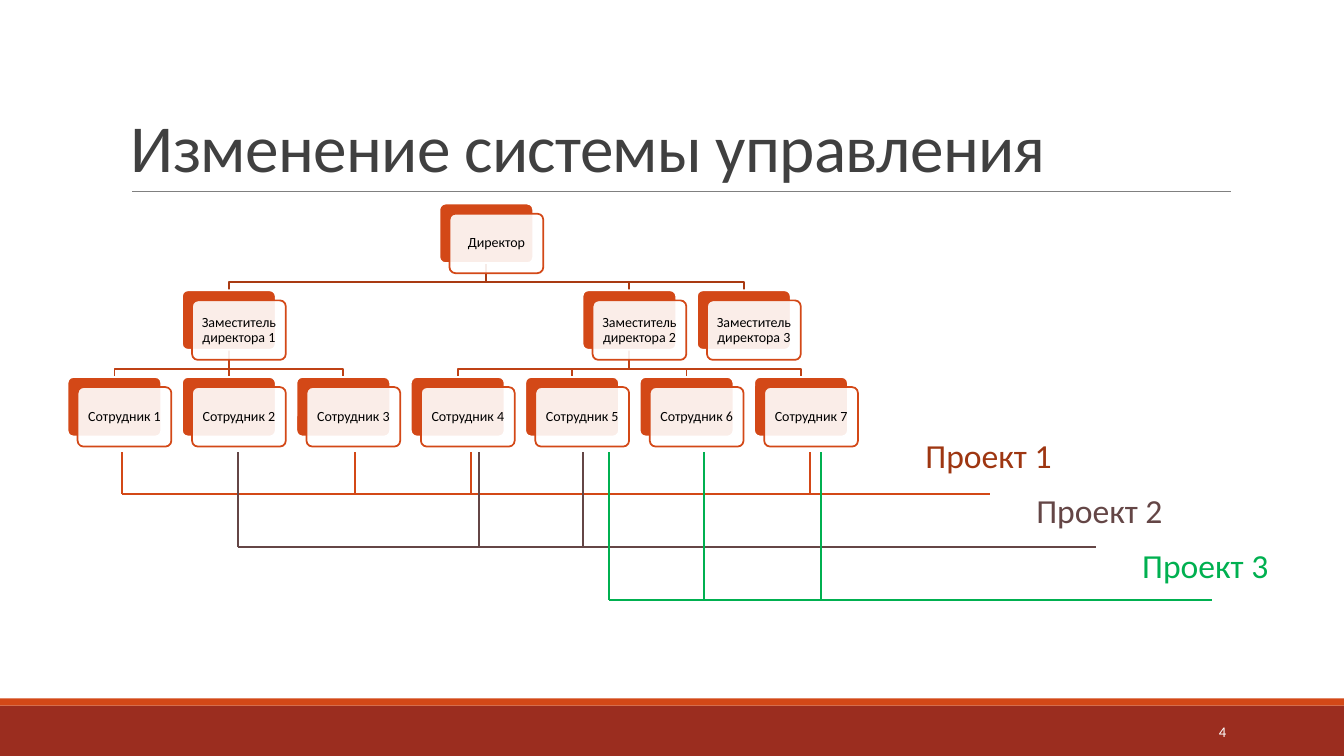
from dataclasses import dataclass

from lxml import etree
from pptx import Presentation
from pptx.dml.color import RGBColor
from pptx.enum import shapes, text
from pptx.oxml.ns import qn
from pptx.util import Inches, Pt


@dataclass(frozen=True)
class Theme:
    font: str = "Calibri"
    white: str = "FFFFFF"
    black: str = "000000"
    accent: str = "D34817"
    footer: str = "9B2D1F"
    rule: str = "808080"
    heading: str = "404040"
    upper_branch: str = "A93A12"
    lower_branch: str = "BF4115"
    project_label: str = "9E3611"
    brown: str = "644646"
    green: str = "00B050"
    heading_size: float = 48
    label_size: float = 24
    number_size: float = 10.5
    card_size: float = 10
    rule_width: float = 0.5
    card_line: float = 1.25
    project_line: float = 1.5


@dataclass(frozen=True)
class Person:
    role: str
    column: float
    level: int
    reports: tuple["Person", ...] = ()

    @property
    def left(self) -> float:
        return 0.67 + 1.135 * self.column

    @property
    def top(self) -> float:
        return 2.02 + 0.86 * self.level

    @property
    def center(self) -> float:
        return self.left + CARD_WIDTH / 2

    @property
    def bottom(self) -> float:
        return self.top + CARD_HEIGHT


@dataclass(frozen=True)
class Project:
    title: str
    color: str
    title_color: str
    title_left: float
    title_top: float
    base: float
    end: float
    members: tuple[float, ...]


THEME = Theme()
CARD_WIDTH, CARD_HEIGHT, CARD_OFFSET = 0.93, 0.59, 0.1
MEMBERS_TOP = 4.48


def employees(first: int, last: int) -> tuple[Person, ...]:
    return tuple(Person(f"Сотрудник {n}", n - 1, 2) for n in range(first, last + 1))


DIRECTOR = Person("Директор", 3.25, 0, (
    Person("Заместитель директора 1", 1, 1, employees(1, 3)),
    Person("Заместитель директора 2", 4.5, 1, employees(4, 7)),
    Person("Заместитель директора 3", 5.5, 1),
))
PROJECTS = (
    Project("Проект 1", THEME.accent, THEME.project_label, 9.08, 4.27, 4.9, 9.82,
            (1.21, 3.52, 4.67, 8.03)),
    Project("Проект 2", THEME.brown, THEME.brown, 10.18, 4.81, 5.43, 10.87,
            (2.36, 4.75, 5.78)),
    Project("Проект 3", THEME.green, THEME.green, 11.23, 5.36, 5.95, 12.02,
            (6.04, 6.98, 8.14)),
)


def rgb(color: str) -> RGBColor:
    return RGBColor.from_string(color)


def write(frame, content: str, size: float, color: str, align=text.PP_ALIGN.LEFT,
          anchor=text.MSO_ANCHOR.TOP, spacing: float = 1.0):
    frame.word_wrap = True
    frame.vertical_anchor = anchor
    frame.text = content
    paragraph = frame.paragraphs[0]
    paragraph.alignment = align
    paragraph.line_spacing = spacing
    font = paragraph.runs[0].font
    font.name, font.size, font.color.rgb = THEME.font, Pt(size), rgb(color)
    return font


def add_label(canvas, left: float, top: float, width: float, height: float,
              content: str, size: float, color: str, **layout):
    label = canvas.add_textbox(Inches(left), Inches(top), Inches(width), Inches(height))
    return write(label.text_frame, content, size, color, **layout)


def add_line(canvas, x1: float, y1: float, x2: float, y2: float,
             color: str, width: float) -> None:
    line = canvas.add_connector(shapes.MSO_CONNECTOR.STRAIGHT,
                                Inches(x1), Inches(y1), Inches(x2), Inches(y2))
    line.line.color.rgb = rgb(color)
    line.line.width = Pt(width)
    etree.SubElement(line._element.spPr, qn("a:effectLst"))


def add_block(canvas, kind, left: float, top: float, width: float, height: float, fill: str):
    block = canvas.add_shape(kind, Inches(left), Inches(top), Inches(width), Inches(height))
    block.shadow.inherit = False
    block.fill.solid()
    block.fill.fore_color.rgb = rgb(fill)
    block.line.fill.background()
    return block


def add_branch(canvas, boss: Person, report: Person) -> None:
    color = THEME.lower_branch if boss.level else THEME.upper_branch
    if boss.center == report.center:
        add_line(canvas, boss.center, boss.bottom, report.center, report.top,
                 color, THEME.card_line)
        return
    bend = boss.bottom + 0.19
    outline = canvas.build_freeform(Inches(boss.center), Inches(boss.bottom))
    outline.add_line_segments([
        (Inches(boss.center), Inches(bend)),
        (Inches(report.center), Inches(bend)),
        (Inches(report.center), Inches(report.top)),
    ], close=False)
    branch = outline.convert_to_shape()
    branch.shadow.inherit = False
    branch.fill.background()
    branch.line.color.rgb = rgb(color)
    branch.line.width = Pt(THEME.card_line)


def add_branches(canvas, boss: Person) -> None:
    for report in boss.reports:
        add_branch(canvas, boss, report)
        add_branches(canvas, report)


def add_cards(canvas, person: Person) -> None:
    for shift, fill, border in ((0, THEME.accent, THEME.white),
                                (CARD_OFFSET, THEME.white, THEME.accent)):
        card = add_block(canvas, shapes.MSO_SHAPE.ROUNDED_RECTANGLE, person.left + shift,
                         person.top + shift, CARD_WIDTH, CARD_HEIGHT, fill)
        card.adjustments[0] = 0.1
        card.line.color.rgb = rgb(border)
        card.line.width = Pt(THEME.card_line)
    tint = card._element.spPr.find(qn("a:solidFill"))[0]
    etree.SubElement(tint, qn("a:alpha"), val="90000")
    frame = card.text_frame
    frame.margin_left = frame.margin_right = Inches(0.02)
    frame.margin_top = frame.margin_bottom = Inches(0.02)
    write(frame, person.role, THEME.card_size, THEME.black, align=text.PP_ALIGN.CENTER,
          anchor=text.MSO_ANCHOR.MIDDLE, spacing=0.9)
    for report in person.reports:
        add_cards(canvas, report)


def add_project(canvas, project: Project) -> None:
    lines = canvas.add_group_shape().shapes
    add_line(lines, project.members[0], project.base, project.end, project.base,
             project.color, THEME.project_line)
    for member in project.members:
        add_line(lines, member, project.base, member, MEMBERS_TOP,
                 project.color, THEME.project_line)
    add_label(canvas, project.title_left, project.title_top, 1.89, 0.5, project.title,
              THEME.label_size, project.title_color)


def main() -> None:
    deck = Presentation()
    deck.slide_width, deck.slide_height = Inches(13.33), Inches(7.5)
    canvas = deck.slides.add_slide(deck.slide_layouts[6]).shapes

    add_block(canvas, shapes.MSO_SHAPE.RECTANGLE, 0, 7, 13.33, 0.5, THEME.footer)
    add_block(canvas, shapes.MSO_SHAPE.RECTANGLE, 0, 6.93, 13.33, 0.07, THEME.accent)
    add_line(canvas, 1.31, 1.9, 12.21, 1.9, THEME.rule, THEME.rule_width)
    heading = add_label(canvas, 1.2, 0.31, 11, 1.59, "Изменение системы управления",
                        THEME.heading_size, THEME.heading,
                        anchor=text.MSO_ANCHOR.BOTTOM, spacing=0.85)
    heading._element.set("spc", "-50")
    add_label(canvas, 10.83, 7.06, 1.43, 0.4, "4", THEME.number_size, THEME.white,
              align=text.PP_ALIGN.RIGHT, anchor=text.MSO_ANCHOR.MIDDLE)

    chart = canvas.add_group_shape().shapes
    add_branches(chart, DIRECTOR)
    add_cards(chart, DIRECTOR)
    for project in PROJECTS:
        add_project(canvas, project)
    deck.save("out.pptx")


if __name__ == "__main__":
    main()
